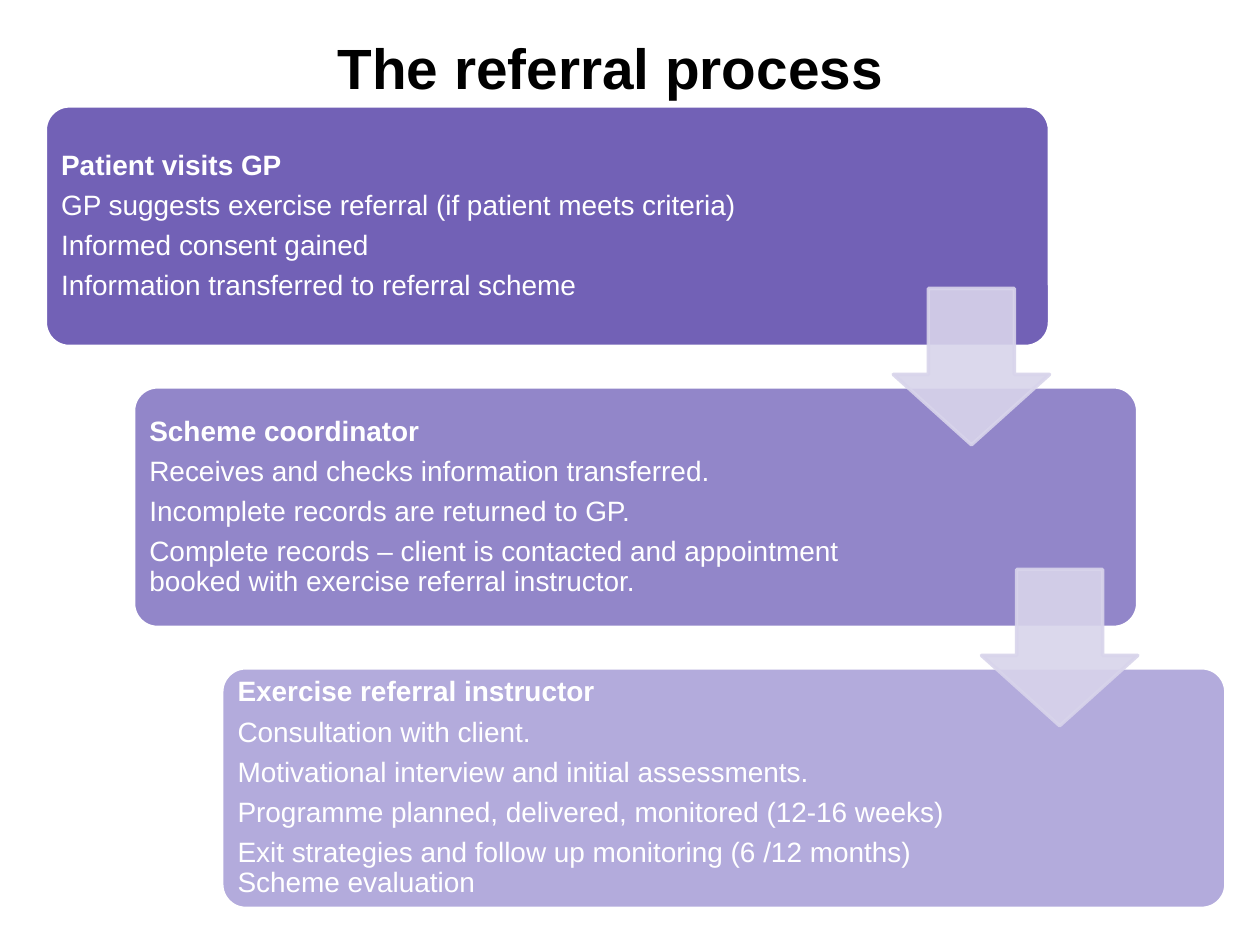
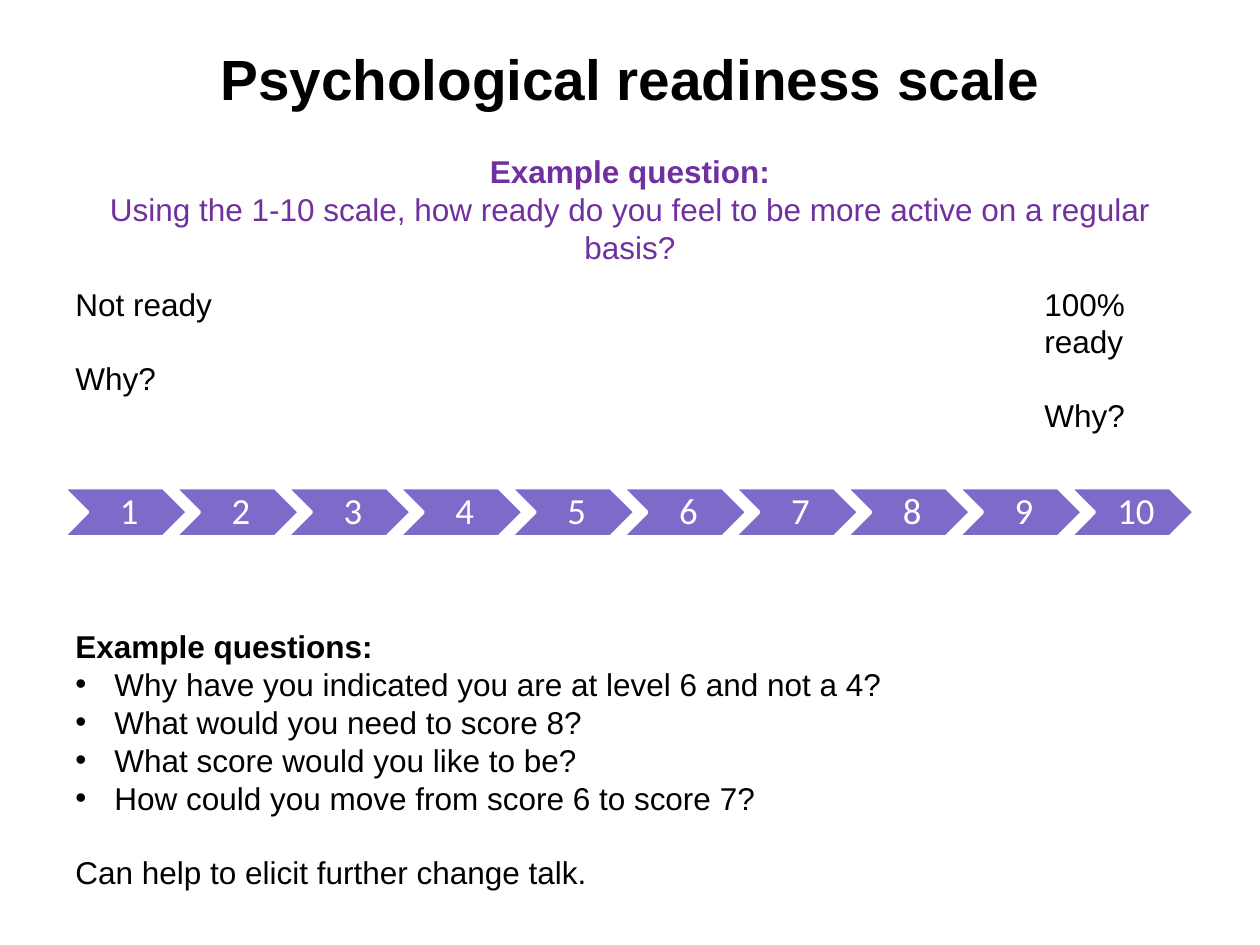
from lxml import etree
from pptx import Presentation
from pptx.dml.color import RGBColor
from pptx.enum.shapes import MSO_SHAPE
from pptx.enum.text import MSO_ANCHOR, PP_ALIGN
from pptx.oxml.ns import qn
from pptx.util import Inches, Pt

ROUNDED, DOWN_ARROW, CHEVRON = (
    MSO_SHAPE.ROUNDED_RECTANGLE, MSO_SHAPE.DOWN_ARROW, MSO_SHAPE.CHEVRON)
TOP, MIDDLE = MSO_ANCHOR.TOP, MSO_ANCHOR.MIDDLE
LEFT, CENTER = PP_ALIGN.LEFT, PP_ALIGN.CENTER

BLACK = RGBColor(0x00, 0x00, 0x00)
WHITE = RGBColor(0xFF, 0xFF, 0xFF)
QUESTION_PURPLE = RGBColor(0x70, 0x30, 0xA0)
CHEVRON_PURPLE = RGBColor(0x7E, 0x6B, 0xC9)
ARROW_LILAC = RGBColor(0xD8, 0xD4, 0xEB)
STAGE_COLOURS = (RGBColor(0x72, 0x61, 0xB6), RGBColor(0x92, 0x86, 0xC9),
                 RGBColor(0xB3, 0xAB, 0xDC))

TITLE_FONT = {"name": "Arial", "size": Pt(32.4), "bold": True, "color": BLACK}
BODY_FONT = {"name": "Arial", "size": Pt(18), "bold": False, "color": BLACK}
HEADING_FONT = {**BODY_FONT, "bold": True}
QUESTION_FONT = {**BODY_FONT, "color": QUESTION_PURPLE}
STAGE_FONT = {**BODY_FONT, "size": Pt(16), "color": WHITE}
NUMBER_FONT = {**STAGE_FONT, "name": "Calibri", "size": Pt(21)}
STAGE_SPACING = {"alignment": LEFT, "line_spacing": 0.9, "space_after": Pt(5.6)}
NUMBER_SPACING = {"alignment": CENTER, "line_spacing": 0.9}
LINE_GAP = {"space_before": Pt(20.7)}

STAGES = (
    ("Patient visits GP",
     "GP suggests exercise referral (if patient meets criteria)",
     "Informed consent gained",
     "Information transferred to referral scheme"),
    ("Scheme coordinator",
     "Receives and checks information transferred.",
     "Incomplete records are returned to GP.",
     "Complete records – client is contacted and appointment booked with "
     "exercise referral instructor."),
    ("Exercise referral instructor",
     "Consultation with client.",
     "Motivational interview and initial assessments.",
     "Programme planned, delivered, monitored (12-16 weeks)",
     "Exit strategies and follow up monitoring (6 /12 months) Scheme evaluation"),
)
FOLLOW_UP_QUESTIONS = (
    "Why have you indicated you are at level 6 and not a 4?",
    "What would you need to score 8?",
    "What score would you like to be?",
    "How could you move from score 6 to score 7?",
)


def apply_format(target, values):
    """Set every attribute in values on target."""
    for name, value in values.items():
        setattr(target, name, value)


def set_margins(frame, left, top, right, bottom):
    """Set the text insets, given in inches."""
    apply_format(frame, {"margin_left": Inches(left), "margin_top": Inches(top),
                         "margin_right": Inches(right),
                         "margin_bottom": Inches(bottom)})


def add_bullet(paragraph):
    """Give a paragraph a hanging round bullet."""
    properties = paragraph._p.get_or_add_pPr()
    indent = Inches(0.31)
    properties.set("marL", str(indent))
    properties.set("indent", str(-indent))
    etree.SubElement(properties, qn("a:buFont")).set("typeface", "Arial")
    etree.SubElement(properties, qn("a:buChar")).set("char", "•")


def write_paragraphs(frame, items):
    """Fill a frame from (text, font, paragraph format, bulleted) items."""
    frame.word_wrap = True
    for index, (text, font, spacing, bulleted) in enumerate(items):
        paragraph = frame.add_paragraph() if index else frame.paragraphs[0]
        if bulleted:
            add_bullet(paragraph)
        apply_format(paragraph, spacing)
        run = paragraph.add_run()
        run.text = text
        apply_format(run.font, {key: value for key, value in font.items()
                                if key != "color"})
        run.font.color.rgb = font["color"]


def add_filled_shape(slide, kind, box, fill, line, adjustments):
    """Add a flat preset shape with a two-point outline."""
    shape = slide.shapes.add_shape(kind, *map(Inches, box))
    shape.shadow.inherit = False
    shape.fill.solid()
    shape.fill.fore_color.rgb = fill
    shape.line.color.rgb = line
    shape.line.width = Pt(2)
    for index, value in enumerate(adjustments):
        shape.adjustments[index] = value
    return shape


def add_text(slide, box, items):
    """Add a wrapping text box."""
    write_paragraphs(slide.shapes.add_textbox(*map(Inches, box)).text_frame, items)


def add_titled_slide(presentation, box, items, anchor):
    """Add a title-only slide and place its title."""
    slide = presentation.slides.add_slide(presentation.slide_layouts[5])
    title = slide.shapes.title
    apply_format(title, dict(zip(("left", "top", "width", "height"),
                                 map(Inches, box))))
    title.text_frame.vertical_anchor = anchor
    write_paragraphs(title.text_frame, items)
    return slide


def add_stage(slide, box, colour, lines):
    """Add one rounded stage with a bold heading and its steps."""
    stage = add_filled_shape(slide, ROUNDED, box, colour, WHITE, (0.1,))
    frame = stage.text_frame
    frame.vertical_anchor = MIDDLE
    set_margins(frame, 0.07, 0.07, 2.02, 0.07)
    write_paragraphs(frame, [
        (line, {**STAGE_FONT, "bold": index == 0}, STAGE_SPACING, False)
        for index, line in enumerate(lines)])


def add_stage_arrow(slide, box):
    """Add a slightly transparent arrow between two stages."""
    arrow = add_filled_shape(slide, DOWN_ARROW, box, ARROW_LILAC, ARROW_LILAC,
                             (0.55, 0.45))
    for colour in arrow._element.spPr.iter(qn("a:srgbClr")):
        etree.SubElement(colour, qn("a:alpha")).set("val", "90000")


def add_staircase(slide, box):
    """Step the stages down to the right, with arrows on top."""
    left, top, width, height = box
    step_x, step_y = 0.7, 2.23
    stage_width, stage_height = width - 2 * step_x, height - 2 * step_y
    arrow_size = 1.24
    for index, (colour, lines) in enumerate(zip(STAGE_COLOURS, STAGES)):
        add_stage(slide, (left + index * step_x, top + index * step_y,
                          stage_width, stage_height), colour, lines)
    for index in range(len(STAGES) - 1):
        add_stage_arrow(slide, (left + stage_width - arrow_size + index * step_x,
                                top + 1.45 + index * step_y,
                                arrow_size, arrow_size))


def add_scale(slide, box, count=10):
    """Add a row of evenly spaced numbered chevrons."""
    left, top, width, height = box
    chevron_width = 0.99
    pitch = (width - chevron_width) / (count - 1)
    for index in range(count):
        chevron = add_filled_shape(
            slide, CHEVRON, (left + index * pitch, top, chevron_width, height),
            CHEVRON_PURPLE, WHITE, (0.5,))
        frame = chevron.text_frame
        frame.vertical_anchor = MIDDLE
        set_margins(frame, 0.09, 0.03, 0.03, 0.03)
        write_paragraphs(frame, [(str(index + 1), NUMBER_FONT, NUMBER_SPACING, False)])


def add_scale_end(slide, box, label):
    """Label one end of the scale and ask why."""
    add_text(slide, box, [(label, BODY_FONT, {}, False),
                          ("Why?", BODY_FONT, LINE_GAP, False)])


def add_follow_up(slide, box):
    """Add the bulleted example questions and the closing remark."""
    add_text(slide, box, [
        ("Example questions:", HEADING_FONT, {}, False),
        *((question, BODY_FONT, {}, True) for question in FOLLOW_UP_QUESTIONS),
        ("Can help to elicit further change talk.", BODY_FONT, LINE_GAP, False)])


def build_referral_slide(presentation):
    """Build the referral process slide."""
    slide = add_titled_slide(
        presentation, (0.51, 0.26, 8.67, 0.54),
        [("The referral process", TITLE_FONT, {"alignment": CENTER}, False)], MIDDLE)
    add_staircase(slide, (0.36, 0.84, 9.37, 6.37))


def build_readiness_slide(presentation):
    """Build the psychological readiness slide."""
    centred = {"alignment": CENTER, "space_before": Pt(0)}
    slide = add_titled_slide(presentation, (0.5, 0.3, 9, 1.8), [
        ("Psychological readiness scale", TITLE_FONT,
         {"alignment": CENTER, "space_after": Pt(23)}, False),
        ("Example question:", {**QUESTION_FONT, "bold": True}, centred, False),
        ("Using the 1-10 scale, how ready do you feel to be more active on a "
         "regular basis?", QUESTION_FONT, centred, False)], TOP)
    add_scale(slide, (0.5, 3.87, 8.98, 0.39))
    add_scale_end(slide, (0.5, 2.21, 1.42, 1.01), "Not ready")
    add_scale_end(slide, (8.19, 2.21, 1.42, 1.31), "100% ready")
    add_follow_up(slide, (0.5, 4.93, 8.83, 2.22))


def main():
    """Build and save the presentation."""
    presentation = Presentation()
    presentation.slide_width = Inches(10)
    presentation.slide_height = Inches(7.5)
    build_referral_slide(presentation)
    build_readiness_slide(presentation)
    presentation.save("out.pptx")


if __name__ == "__main__":
    main()
